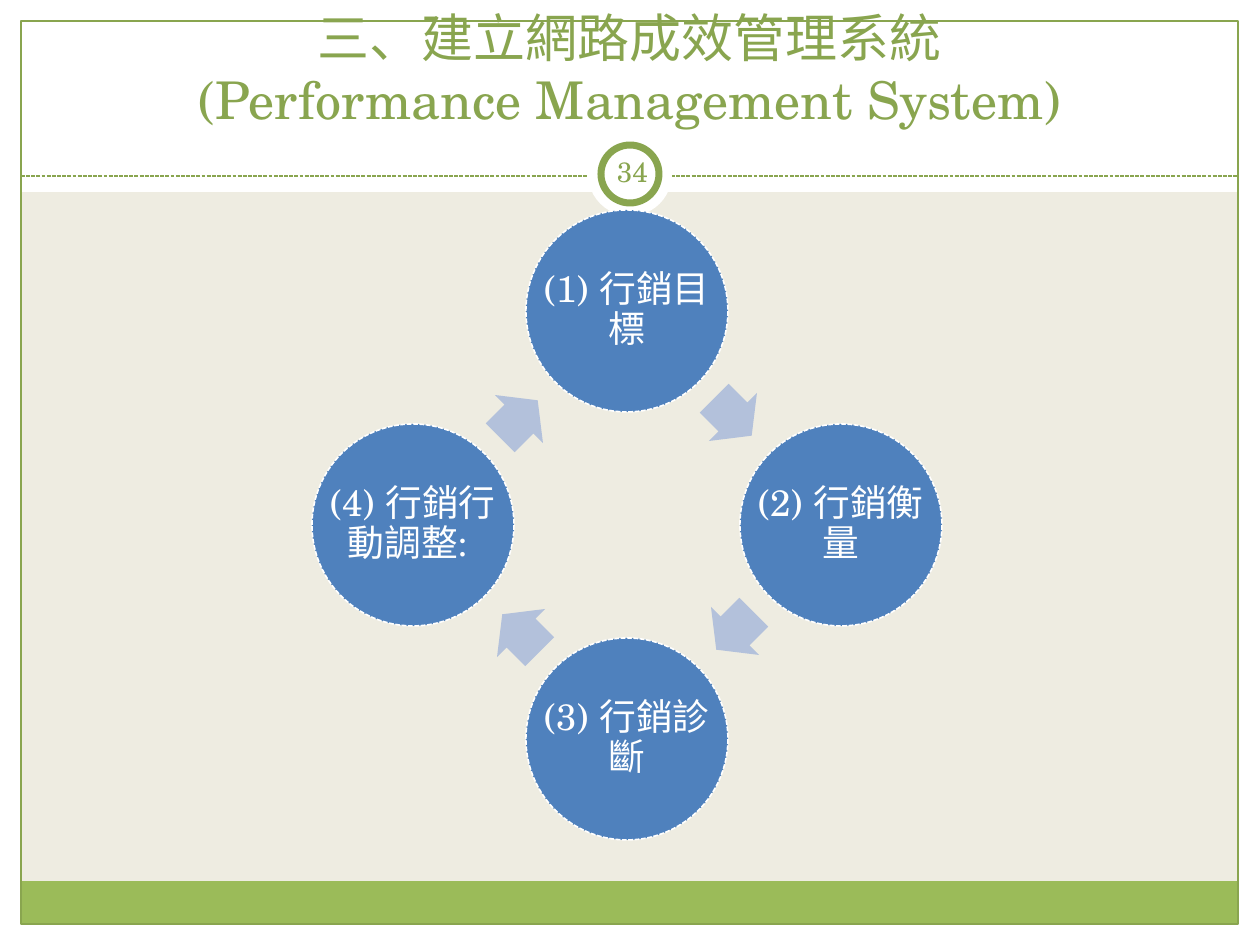
import pptx
import pptx.util
import pptx.dml.color
import pptx.enum.dml
import pptx.enum.shapes
import pptx.enum.text
import pptx.oxml.ns
from dataclasses import dataclass
from lxml import etree

SCALE = 914400 / 126  # EMU in one px
KIND = pptx.enum.shapes.MSO_SHAPE
ANCHOR = pptx.enum.text.MSO_ANCHOR
DASH = pptx.enum.dml.MSO_LINE.SQUARE_DOT  # sysDot in the file format
HUB = (627, 525)
STEPS = ["(1) 行銷目標", "(2) 行銷衡量", "(3) 行銷診斷", "(4) 行銷行動調整: "]


@dataclass(frozen=True)
class Theme:
    font: str = "TeX Gyre Schola"
    back: str = "EEECE1"
    white: str = "FFFFFF"
    band: str = "9BBB59"
    green: str = "89A54F"
    blue: str = "4F81BD"
    pale: str = "B3C1DB"
    title: float = 29.7
    page: float = 16
    step: float = 21


THEME = Theme()


def emu(px):
    return pptx.util.Emu(round(px * SCALE))


def rgb(code):
    return pptx.dml.color.RGBColor.from_string(code)


def style_line(line, color, width, dash=False):
    line.color.rgb = rgb(color)
    line.width = pptx.util.Pt(width)
    if dash:
        line.dash_style = DASH
        mark = line._ln.find(pptx.oxml.ns.qn("a:prstDash"))
        mark.set("val", "sysDash")


def add_shape(slide, kind, box, fill=None, line=None):
    """Add a preset shape; line holds color, width and an optional dash flag."""
    shape = slide.shapes.add_shape(kind, *map(emu, box))
    shape.shadow.inherit = False
    if fill:
        shape.fill.solid()
        shape.fill.fore_color.rgb = rgb(fill)
    else:
        shape.fill.background()
    if line:
        style_line(shape.line, *line)
    else:
        shape.line.fill.background()
    return shape


def add_rule(slide, left, right, top):
    rule = slide.shapes.add_connector(
        pptx.enum.shapes.MSO_CONNECTOR.STRAIGHT,
        emu(left), emu(top), emu(right), emu(top))
    style_line(rule.line, THEME.green, 0.75, True)
    etree.SubElement(rule._element.spPr, pptx.oxml.ns.qn("a:effectLst"))


def add_text(slide, box, lines, size, color, inset, anchor=ANCHOR.MIDDLE):
    """Add a centred paragraph with a line break between its lines."""
    frame = slide.shapes.add_textbox(*map(emu, box)).text_frame
    frame.word_wrap = True
    frame.vertical_anchor = anchor
    frame.margin_left = frame.margin_right = emu(inset)
    frame.margin_top = frame.margin_bottom = emu(inset)
    para = frame.paragraphs[0]
    para.alignment = pptx.enum.text.PP_ALIGN.CENTER
    for index, line in enumerate(lines):
        if index:
            para.add_line_break()
        run = para.add_run()
        run.text = line
        run.font.name = THEME.font
        run.font.size = pptx.util.Pt(size)
        run.font.color.rgb = rgb(color)
    return para


def add_frame(slide):
    for box in [(0, 924, 1260, 21), (0, 0, 1260, 192),
                (0, 0, 21, 945), (1239, 0, 21, 945)]:
        add_shape(slide, KIND.RECTANGLE, box, THEME.white)
    add_shape(slide, KIND.RECTANGLE, (21, 881, 1217, 43), THEME.band)
    add_shape(slide, KIND.RECTANGLE, (21, 21, 1217, 903),
              line=(THEME.green, 0.75))
    add_rule(slide, 21, 1239, 176)


def add_badge(slide, page):
    add_shape(slide, KIND.OVAL, (588, 132, 84, 84), THEME.white)
    add_shape(slide, KIND.OVAL, (601, 145, 58, 58), THEME.white,
              (THEME.green, 4))
    add_text(slide, (601, 141, 63, 60), [page], THEME.page, THEME.green, 6)


def center_box(offset, width, height):
    return (HUB[0] + offset[0] - width / 2, HUB[1] + offset[1] - height / 2,
            width, height)


def turn(offset):
    """Turn an offset from the hub a quarter clockwise."""
    return -offset[1], offset[0]


def add_step(slide, label, offset):
    box = center_box(offset, 202, 202)
    add_shape(slide, KIND.OVAL, box, THEME.blue, (THEME.white, 0.9, True))
    para = add_text(slide, box, [label], THEME.step, THEME.white, 4)
    para.line_spacing = 0.9
    para.space_after = pptx.util.Pt(7)


def add_arrow(slide, offset, angle):
    arrow = add_shape(slide, KIND.RIGHT_ARROW, center_box(offset, 53, 68),
                      THEME.pale)
    arrow.adjustments[0] = 0.6
    arrow.adjustments[1] = 0.5
    arrow.rotation = angle


def add_cycle(slide):
    step, arrow = (0, -214), (106, -108)
    for index, label in enumerate(STEPS):
        add_step(slide, label, step)
        add_arrow(slide, arrow, 45 + 90 * index)
        step, arrow = turn(step), turn(arrow)


def main():
    deck = pptx.Presentation()
    deck.slide_width, deck.slide_height = emu(1260), emu(945)
    slide = deck.slides.add_slide(deck.slide_layouts[6])
    slide.background.fill.solid()
    slide.background.fill.fore_color.rgb = rgb(THEME.back)
    add_frame(slide)
    add_badge(slide, "34")
    add_text(slide, (42, 32, 1176, 104),
             ["三、建立網路成效管理系統", "(Performance Management System)"],
             THEME.title, THEME.green, 6, ANCHOR.BOTTOM)
    add_cycle(slide)
    deck.save("out.pptx")


if __name__ == "__main__":
    main()
